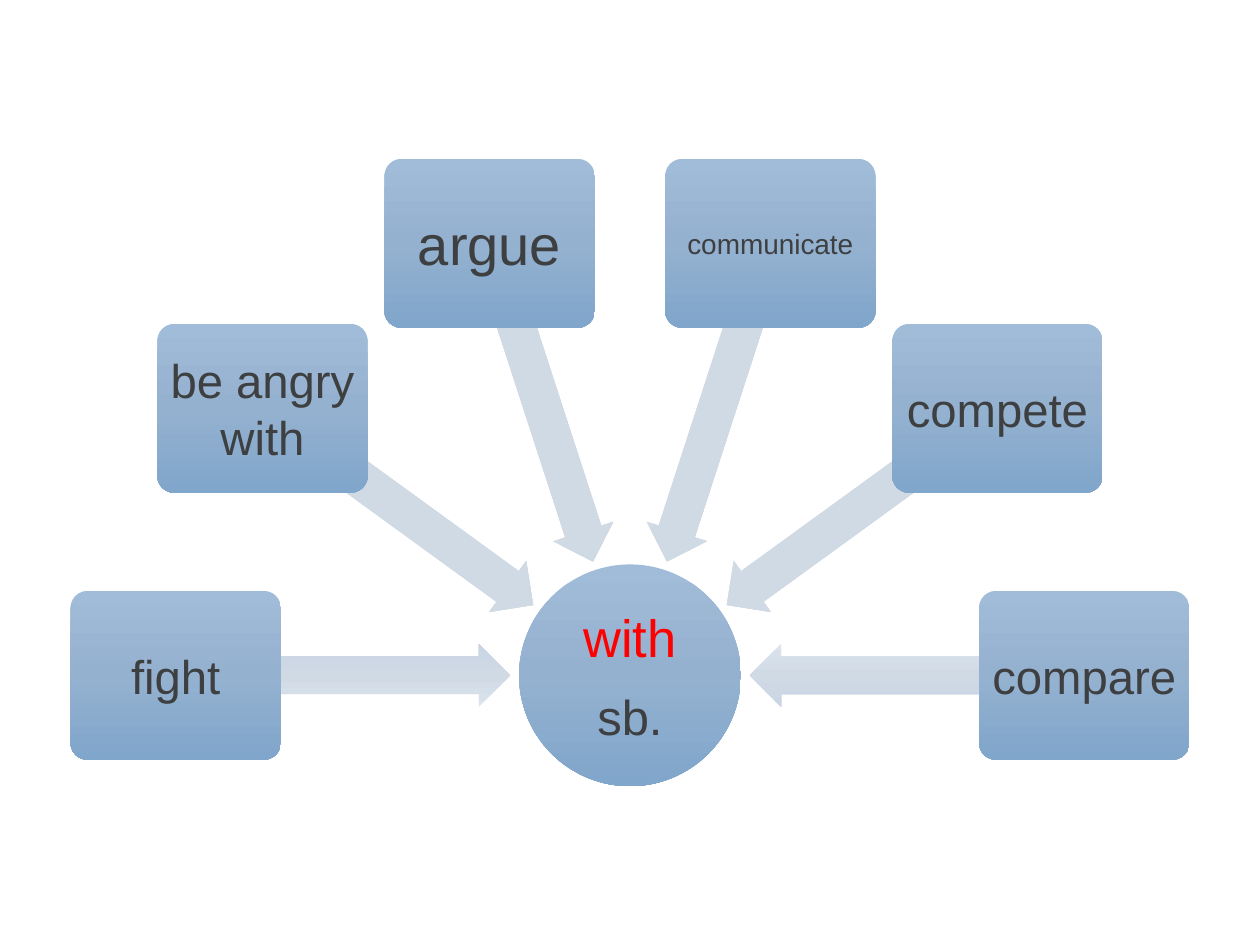
from dataclasses import dataclass
from math import cos, radians, sin

from lxml.etree import SubElement
from pptx import Presentation
from pptx.dml.color import RGBColor
from pptx.enum.shapes import MSO_SHAPE
from pptx.enum.text import MSO_ANCHOR, PP_ALIGN
from pptx.oxml.ns import qn
from pptx.util import Inches, Pt


@dataclass(frozen=True)
class Theme:
    font: str = "Arial"
    text: str = "3D3F41"
    accent: str = "FF0000"
    node_gradient: tuple = ("A1BCD9", "94B1CF", "80A6CB")
    arrow_gradient: tuple = ("DBE3EC", "D0DAE5", "C9D5E3")
    hub_accent_size: int = 30
    hub_size: int = 28
    large_size: int = 32
    word_size: int = 27
    small_size: int = 16


THEME = Theme()

# Words run clockwise from the left of the hub to its right.
WORDS = [
    ("fight", THEME.word_size),
    ("be angry with", THEME.word_size),
    ("argue", THEME.large_size),
    ("communicate", THEME.small_size),
    ("compete", THEME.word_size),
    ("compare", THEME.word_size),
]
HUB_SIZE = 1.76
ARROW_SIZE = (2.58, 0.5)
WORD_SIZE = (1.67, 1.34)


def fill_gradient(shape, colors):
    """Fill from top to bottom with evenly spaced colours."""
    shape.fill.gradient()
    shape.fill.gradient_angle = 270
    stops = shape._element.spPr.find(qn("a:gradFill")).find(qn("a:gsLst"))
    for stop in list(stops):
        stops.remove(stop)
    for index, color in enumerate(colors):
        position = 100000 * index // (len(colors) - 1)
        stop = SubElement(stops, qn("a:gs"), pos=str(position))
        SubElement(stop, qn("a:srgbClr"), val=color)


def add_centered_shape(slide, kind, center, size, colors):
    (x, y), (width, height) = center, size
    shape = slide.shapes.add_shape(
        kind, Inches(x - width / 2), Inches(y - height / 2),
        Inches(width), Inches(height))
    shape.shadow.inherit = False
    shape.line.fill.background()
    fill_gradient(shape, colors)
    return shape


def write_lines(shape, lines):
    """Write (text, size, colour) lines in the middle of the shape."""
    frame = shape.text_frame
    frame.word_wrap = True
    frame.vertical_anchor = MSO_ANCHOR.MIDDLE
    frame.margin_left = frame.margin_right = Inches(0.02)
    frame.margin_top = frame.margin_bottom = Inches(0.02)
    for index, (text, size, color) in enumerate(lines):
        paragraph = frame.add_paragraph() if index else frame.paragraphs[0]
        paragraph.alignment = PP_ALIGN.CENTER
        space_after = SubElement(
            paragraph._p.get_or_add_pPr(), qn("a:spcAft"))
        SubElement(space_after, qn("a:spcPct"), val="35000")
        run = paragraph.add_run()
        run.text = text
        run.font.name = THEME.font
        run.font.size = Pt(size)
        run.font.color.rgb = RGBColor.from_string(color)


def add_hub(slide, center):
    hub = add_centered_shape(slide, MSO_SHAPE.OVAL, center,
                             (HUB_SIZE, HUB_SIZE), THEME.node_gradient)
    write_lines(hub, [("with", THEME.hub_accent_size, THEME.accent),
                      ("sb.", THEME.hub_size, THEME.text)])


def add_arrow(slide, center, rotation):
    arrow = add_centered_shape(slide, MSO_SHAPE.LEFT_ARROW, center,
                               ARROW_SIZE, THEME.arrow_gradient)
    arrow.adjustments[0] = 0.6
    arrow.adjustments[1] = 0.5
    arrow.rotation = rotation


def add_word(slide, center, text, size):
    box = add_centered_shape(slide, MSO_SHAPE.ROUNDED_RECTANGLE, center,
                             WORD_SIZE, THEME.node_gradient)
    box.adjustments[0] = 0.1
    write_lines(box, [(text, size, THEME.text)])


def add_converging_diagram(slide, left, top, width, height):
    """Place words on a half circle, each with an arrow to the hub."""
    hub_x = left + width / 2
    hub_y = top + height - HUB_SIZE / 2
    word_radius = (width - WORD_SIZE[0]) / 2
    arrow_radius = 2.24

    def point(radius, angle):
        return (hub_x + radius * cos(radians(angle)),
                hub_y + radius * sin(radians(angle)))

    add_hub(slide, (hub_x, hub_y))
    step = 180 / (len(WORDS) - 1)
    for index, (text, size) in enumerate(WORDS):
        angle = 180 + index * step
        add_arrow(slide, point(arrow_radius, angle), angle % 360)
        add_word(slide, point(word_radius, angle), text, size)


def main():
    presentation = Presentation()
    presentation.slide_width = Inches(10)
    presentation.slide_height = Inches(7.5)
    slide = presentation.slides.add_slide(presentation.slide_layouts[6])
    add_converging_diagram(slide, 0.56, 1.26, 8.88, 4.98)
    presentation.save("out.pptx")


if __name__ == "__main__":
    main()
